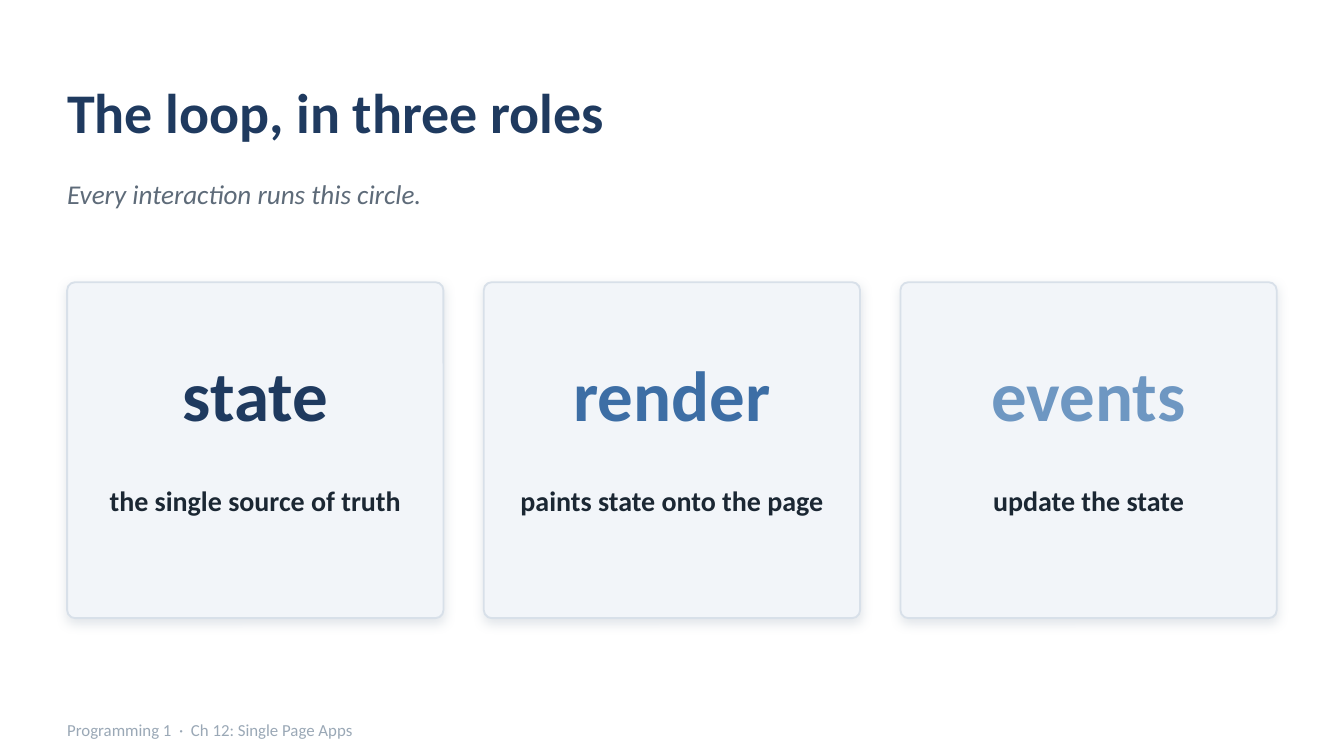
"""Build the slide on the three roles of the loop."""
import pptx
import pptx.util
import pptx.dml.color
import pptx.enum.shapes
import pptx.enum.text
import pptx.oxml
import pptx.oxml.ns

PX = 4572
ALIGN = pptx.enum.text.PP_ALIGN
ANCHOR = pptx.enum.text.MSO_ANCHOR
SHADOW = (
    f'<a:outerShdw {pptx.oxml.ns.nsdecls("a")} blurRad="76200" dist="25400" '
    'dir="5400000" algn="ctr" rotWithShape="0">'
    '<a:srgbClr val="9AA8B6"><a:alpha val="28000"/></a:srgbClr></a:outerShdw>'
)


def color(code):
    return pptx.dml.color.RGBColor.from_string(code)


def write(box, text, size, code, bold=False, italic=False,
          align=ALIGN.LEFT, anchor=ANCHOR.MIDDLE):
    frame = box.text_frame
    frame.text = text
    frame.word_wrap = True
    frame.auto_size = pptx.enum.text.MSO_AUTO_SIZE.NONE
    frame.vertical_anchor = anchor
    frame.margin_left = frame.margin_right = 0
    frame.margin_top = frame.margin_bottom = 0
    para = frame.paragraphs[0]
    para.alignment = align
    font = para.runs[0].font
    font.name = "Calibri"
    font.size = pptx.util.Pt(size)
    font.bold = bold
    font.italic = italic
    font.color.rgb = color(code)


deck = pptx.Presentation()
deck.slide_width = 2000 * PX
deck.slide_height = 1125 * PX
slide = deck.slides.add_slide(deck.slide_layouts[5])
shapes = slide.shapes

title = shapes.title
title.left, title.top = 100 * PX, 80 * PX
title.width, title.height = 1800 * PX, 170 * PX
write(title, "The loop, in three roles", 30, "1F3A5F", bold=True)

lead = shapes.add_textbox(100 * PX, 248 * PX, 1800 * PX, 80 * PX)
write(lead, "Every interaction runs this circle.", 14.5, "5E6B79", italic=True)

roles = [
    ("state", "the single source of truth", "1F3A5F"),
    ("render", "paints state onto the page", "3D6EA5"),
    ("events", "update the state", "6E97C2"),
]
for i, (role, task, code) in enumerate(roles):
    left = 100 + 620 * i
    card = shapes.add_shape(
        pptx.enum.shapes.MSO_SHAPE.ROUNDED_RECTANGLE,
        left * PX, 420 * PX, 560 * PX, 500 * PX)
    card.adjustments[0] = 0.024
    card.fill.solid()
    card.fill.fore_color.rgb = color("F2F5F9")
    card.line.color.rgb = color("D8E0E9")
    card.line.width = pptx.util.Pt(1)
    card.shadow.inherit = False
    effects = card._element.spPr.find(pptx.oxml.ns.qn("a:effectLst"))
    effects.append(pptx.oxml.parse_xml(SHADOW))

    name = shapes.add_textbox((left + 20) * PX, 490 * PX, 520 * PX, 190 * PX)
    write(name, role, 38, code, bold=True, align=ALIGN.CENTER)
    note = shapes.add_textbox((left + 30) * PX, 720 * PX, 500 * PX, 160 * PX)
    write(note, task, 15, "1B2733", bold=True, align=ALIGN.CENTER,
          anchor=ANCHOR.TOP)

foot = shapes.add_textbox(100 * PX, 1060 * PX, 1600 * PX, 52 * PX)
write(foot, "Programming 1  ·  Ch 12: Single Page Apps", 9, "9AA8B6")

deck.save("out.pptx")
